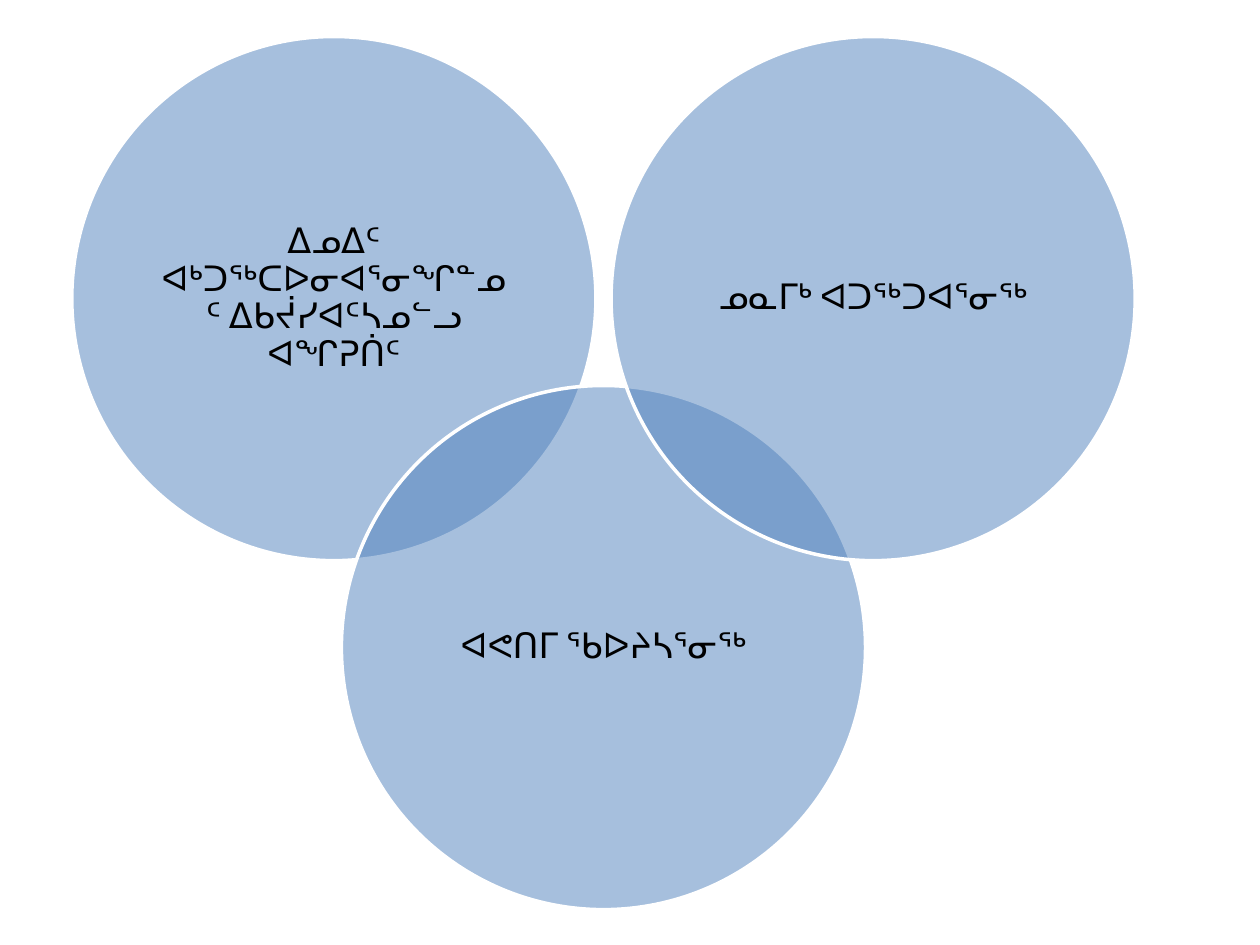
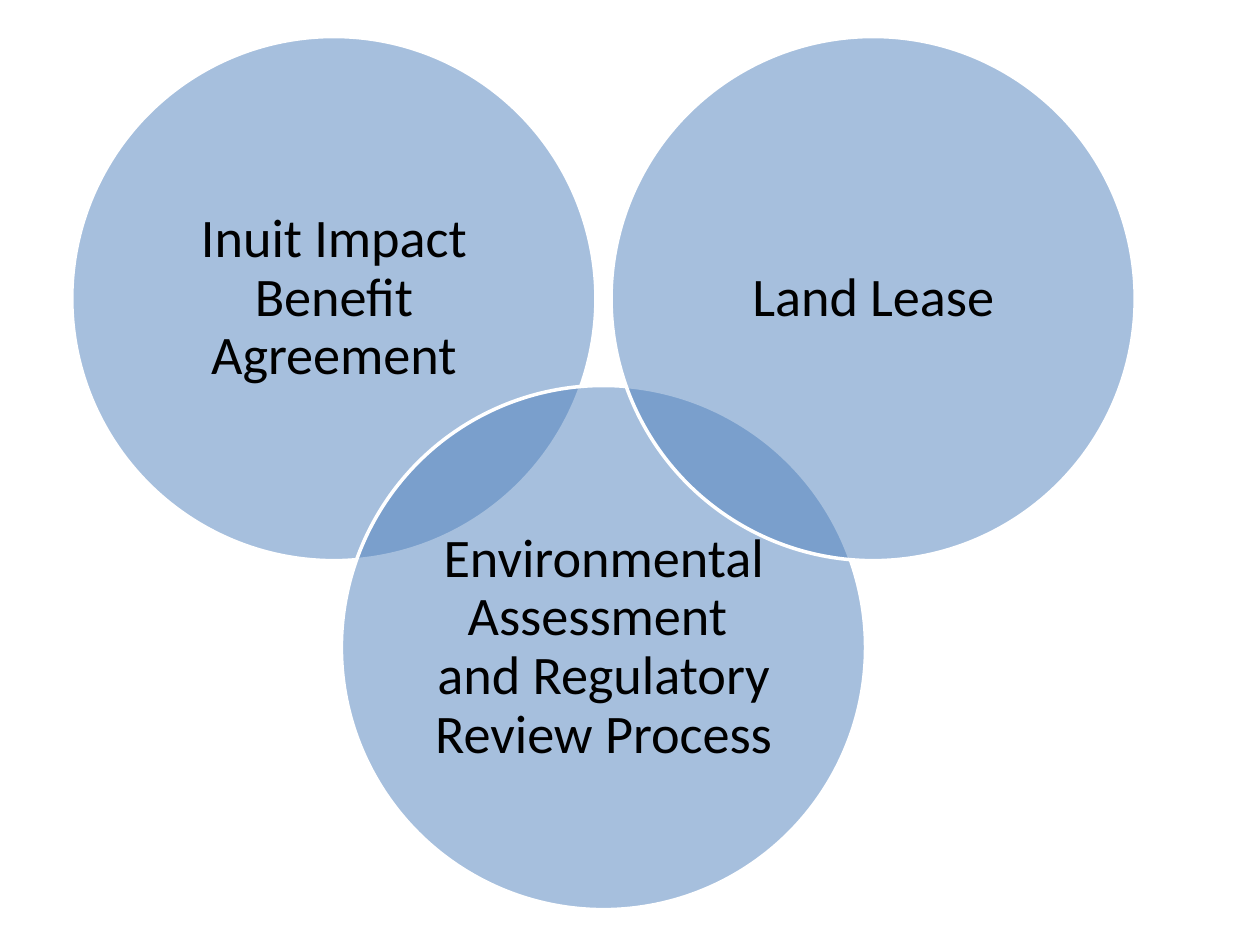
import math
from dataclasses import dataclass

from lxml import etree
from pptx import Presentation
from pptx import util as u
from pptx.dml.color import RGBColor
from pptx.enum import shapes, text
from pptx.oxml.ns import qn

VENN_SLIDES = [
    {
        "size": 20,
        "inset": 0.08,
        "topics": [
            "ᐃᓄᐃᑦ ᐊᒃᑐᖅᑕᐅᓂᐊᕐᓂᖏᓐᓄᑦ ᐃᑲᔫᓯᐊᑦᓴᓄᓪᓗ ᐊᖏᕈᑏᑦ",
            "ᐊᕙᑎᒥ ᖃᐅᔨᓴᕐᓂᖅ",
            "ᓄᓇᒥᒃ ᐊᑐᖅᑐᐊᕐᓂᖅ",
        ],
    },
    {
        "size": 31,
        "inset": 0.13,
        "topics": [
            "Inuit Impact Benefit Agreement",
            "Environmental Assessment \vand Regulatory Review Process",
            "Land Lease",
        ],
    },
]


@dataclass(frozen=True)
class Theme:
    font: str = "Calibri"
    ink: RGBColor = RGBColor(0, 0, 0)
    circle: RGBColor = RGBColor(0x4F, 0x81, 0xBD)
    rim: RGBColor = RGBColor(0xFF, 0xFF, 0xFF)
    rim_width: float = 2
    opacity: int = 50
    line_spacing: float = 0.9


THEME = Theme()
SLIDE_WIDTH, SLIDE_HEIGHT = 10, 7.5
DIAMETER = 4.16
LEFT, TOP = 0.57, 0.29
COLUMN, ROW = 2.14, 2.77
LABEL_SIDE = DIAMETER / math.sqrt(2)
LABEL_OFFSET = (DIAMETER - LABEL_SIDE) / 2


def square(left, top, side):
    return [u.Inches(length) for length in (left, top, side, side)]


def add_circle(slide, left, top):
    circle = slide.shapes.add_shape(
        shapes.MSO_SHAPE.OVAL, *square(left, top, DIAMETER))
    circle.shadow.inherit = False
    circle.fill.solid()
    circle.fill.fore_color.rgb = THEME.circle
    tint = circle.fill._xPr.find(qn("a:solidFill"))[0]
    etree.SubElement(tint, qn("a:alpha")).set("val", str(THEME.opacity * 1000))
    circle.line.color.rgb = THEME.rim
    circle.line.width = u.Pt(THEME.rim_width)


def add_label(slide, left, top, topic, size, inset):
    label = slide.shapes.add_textbox(
        *square(left + LABEL_OFFSET, top + LABEL_OFFSET, LABEL_SIDE))
    frame = label.text_frame
    frame.word_wrap = True
    frame.vertical_anchor = text.MSO_ANCHOR.MIDDLE
    frame.margin_left = frame.margin_right = u.Inches(inset)
    frame.margin_top = frame.margin_bottom = u.Inches(inset)
    paragraph = frame.paragraphs[0]
    paragraph.text = topic
    paragraph.alignment = text.PP_ALIGN.CENTER
    paragraph.line_spacing = THEME.line_spacing
    paragraph.font.name = THEME.font
    paragraph.font.size = u.Pt(size)
    paragraph.font.color.rgb = THEME.ink


def add_venn(slide, size, inset, topics):
    for column, topic in enumerate(topics):
        left = LEFT + column * COLUMN
        top = TOP + column % 2 * ROW
        add_circle(slide, left, top)
        add_label(slide, left, top, topic, size, inset)


def main():
    deck = Presentation()
    deck.slide_width = u.Inches(SLIDE_WIDTH)
    deck.slide_height = u.Inches(SLIDE_HEIGHT)
    for venn in VENN_SLIDES:
        add_venn(deck.slides.add_slide(deck.slide_layouts[6]), **venn)
    deck.save("out.pptx")


if __name__ == "__main__":
    main()
